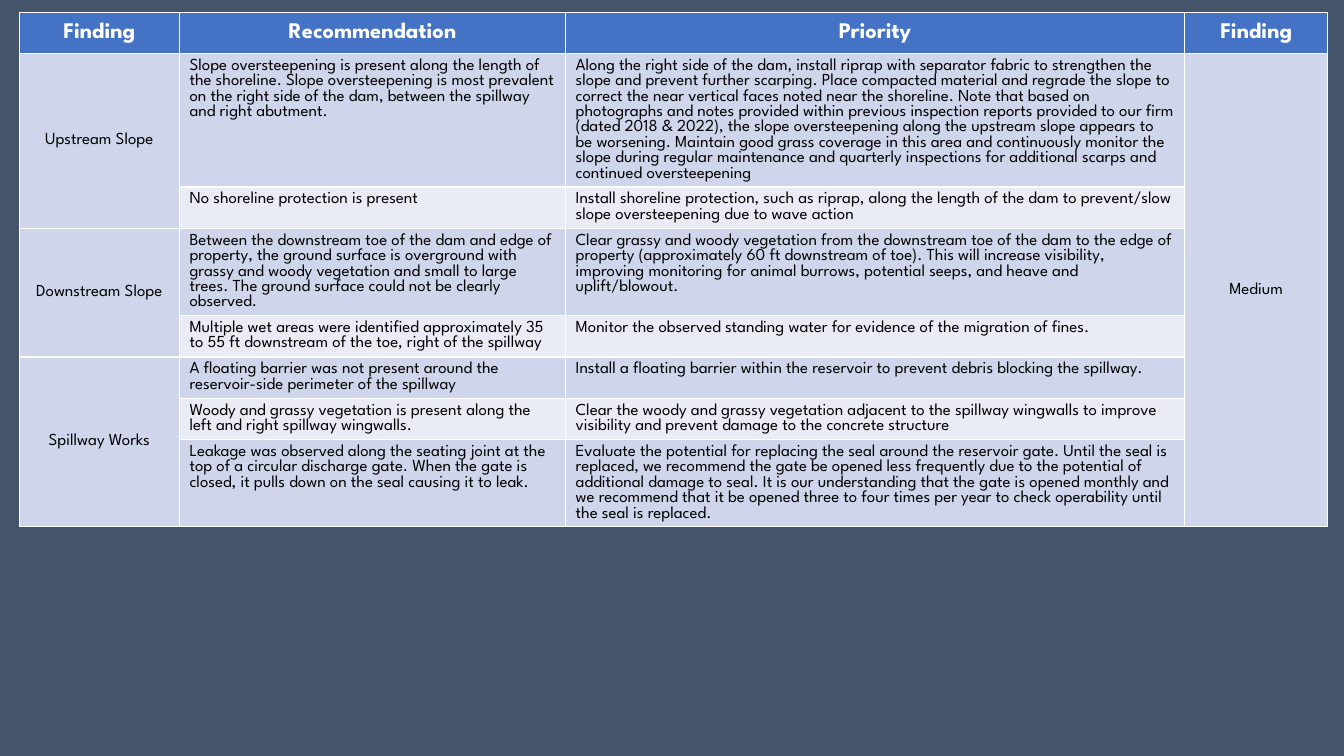
from pptx import Presentation
from pptx.dml.color import RGBColor
from pptx.enum.text import MSO_ANCHOR, PP_ALIGN
from pptx.util import Inches, Pt

MIDDLE, TOP = MSO_ANCHOR.MIDDLE, MSO_ANCHOR.TOP
CENTER, LEFT = PP_ALIGN.CENTER, PP_ALIGN.LEFT

# Content
HEADERS = ["Finding", "Recommendation", "Priority", "Finding"]
PRIORITY = "Medium"
AREAS = [
    ("Upstream Slope", [
        ("Slope oversteepening is present along the length of the shoreline. "
         "Slope oversteepening is most prevalent on the right side of the dam, "
         "between the spillway and right abutment.",
         "Along the right side of the dam, install riprap with separator fabric "
         "to strengthen the slope and prevent further scarping. Place compacted "
         "material and regrade the slope to correct the near vertical faces noted "
         "near the shoreline. Note that based on photographs and notes provided "
         "within previous inspection reports provided to our firm (dated 2018 & "
         "2022), the slope oversteepening along the upstream slope appears to be "
         "worsening. Maintain good grass coverage in this area and continuously "
         "monitor the slope during regular maintenance and quarterly inspections "
         "for additional scarps and continued oversteepening"),
        ("No shoreline protection is present",
         "Install shoreline protection, such as riprap, along the length of the "
         "dam to prevent/slow slope oversteepening due to wave action"),
    ]),
    ("Downstream Slope", [
        ("Between the downstream toe of the dam and edge of property, the ground "
         "surface is overground with grassy and woody vegetation and small to "
         "large trees. The ground surface could not be clearly observed.",
         "Clear grassy and woody vegetation from the downstream toe of the dam to "
         "the edge of property (approximately 60 ft downstream of toe). This will "
         "increase visibility, improving monitoring for animal burrows, potential "
         "seeps, and heave and uplift/blowout."),
        ("Multiple wet areas were identified approximately 35 to 55 ft downstream "
         "of the toe, right of the spillway",
         "Monitor the observed standing water for evidence of the migration of "
         "fines."),
    ]),
    ("Spillway Works", [
        ("A floating barrier was not present around the reservoir-side perimeter "
         "of the spillway",
         "Install a floating barrier within the reservoir to prevent debris "
         "blocking the spillway."),
        ("Woody and grassy vegetation is present along the left and right spillway "
         "wingwalls.",
         "Clear the woody and grassy vegetation adjacent to the spillway wingwalls "
         "to improve visibility and prevent damage to the concrete structure"),
        ("Leakage was observed along the seating joint at the top of a circular "
         "discharge gate. When the gate is closed, it pulls down on the seal "
         "causing it to leak.",
         "Evaluate the potential for replacing the seal around the reservoir gate. "
         "Until the seal is replaced, we recommend the gate be opened less "
         "frequently due to the potential of additional damage to seal. It is our "
         "understanding that the gate is opened monthly and we recommend that it "
         "be opened three to four times per year to check operability until the "
         "seal is replaced."),
    ]),
]

# Style
FONT = "League Spartan"
BACKGROUND, HEADER_FILL = "44546A", "4472C4"
BANDS = ["CFD5EA", "E9EBF5"]
WHITE, BLACK = "FFFFFF", "000000"
COL_WIDTHS = [1.59, 3.83, 6.14, 1.42]
ROW_HEIGHT = 0.41  # minimum; rows grow with their text
TABLE_HEIGHT = 7.31


def rgb(color):
    return RGBColor.from_string(color)


def set_fill(cell, color):
    cell.fill.solid()
    cell.fill.fore_color.rgb = rgb(color)


def set_text(cell, text, size=12, color=BLACK, bold=False, centered=False):
    cell.vertical_anchor = MIDDLE if centered else TOP
    p = cell.text_frame.paragraphs[0]
    p.alignment = CENTER if centered else LEFT
    r = p.add_run()
    r.text = text
    r.font.name = FONT
    r.font.size = Pt(size)
    r.font.bold = bold
    r.font.color.rgb = rgb(color)


prs = Presentation()
prs.slide_width, prs.slide_height = Inches(13.33), Inches(7.5)
s = prs.slides.add_slide(prs.slide_layouts[6])
s.background.fill.solid()
s.background.fill.fore_color.rgb = rgb(BACKGROUND)

# Table grid
n_rows = 1 + sum(len(items) for _, items in AREAS)
last_col = len(HEADERS) - 1
frame = s.shapes.add_table(n_rows, len(HEADERS), Inches(0.19), Inches(0.12),
                           Inches(sum(COL_WIDTHS)), Inches(TABLE_HEIGHT))
table = frame.table
for col, width in zip(table.columns, COL_WIDTHS):
    col.width = Inches(width)
for row in table.rows:
    row.height = Inches(ROW_HEIGHT)
frame.height = Inches(TABLE_HEIGHT)

# Header row
for c, header in enumerate(HEADERS):
    set_fill(table.cell(0, c), HEADER_FILL)
    set_text(table.cell(0, c), header, 16, WHITE, bold=True, centered=True)

# One merged area cell per group, banded items beside it
row = 1
for area, items in AREAS:
    table.cell(row, 0).merge(table.cell(row + len(items) - 1, 0))
    set_text(table.cell(row, 0), area, centered=True)
    for item in items:
        for c in (0, last_col):
            set_fill(table.cell(row, c), BANDS[0])
        for c, text in enumerate(item, start=1):
            set_fill(table.cell(row, c), BANDS[(row - 1) % 2])
            set_text(table.cell(row, c), text)
        row += 1

# Priority shared by every row
table.cell(1, last_col).merge(table.cell(n_rows - 1, last_col))
set_text(table.cell(1, last_col), PRIORITY, centered=True)

prs.save("out.pptx")
